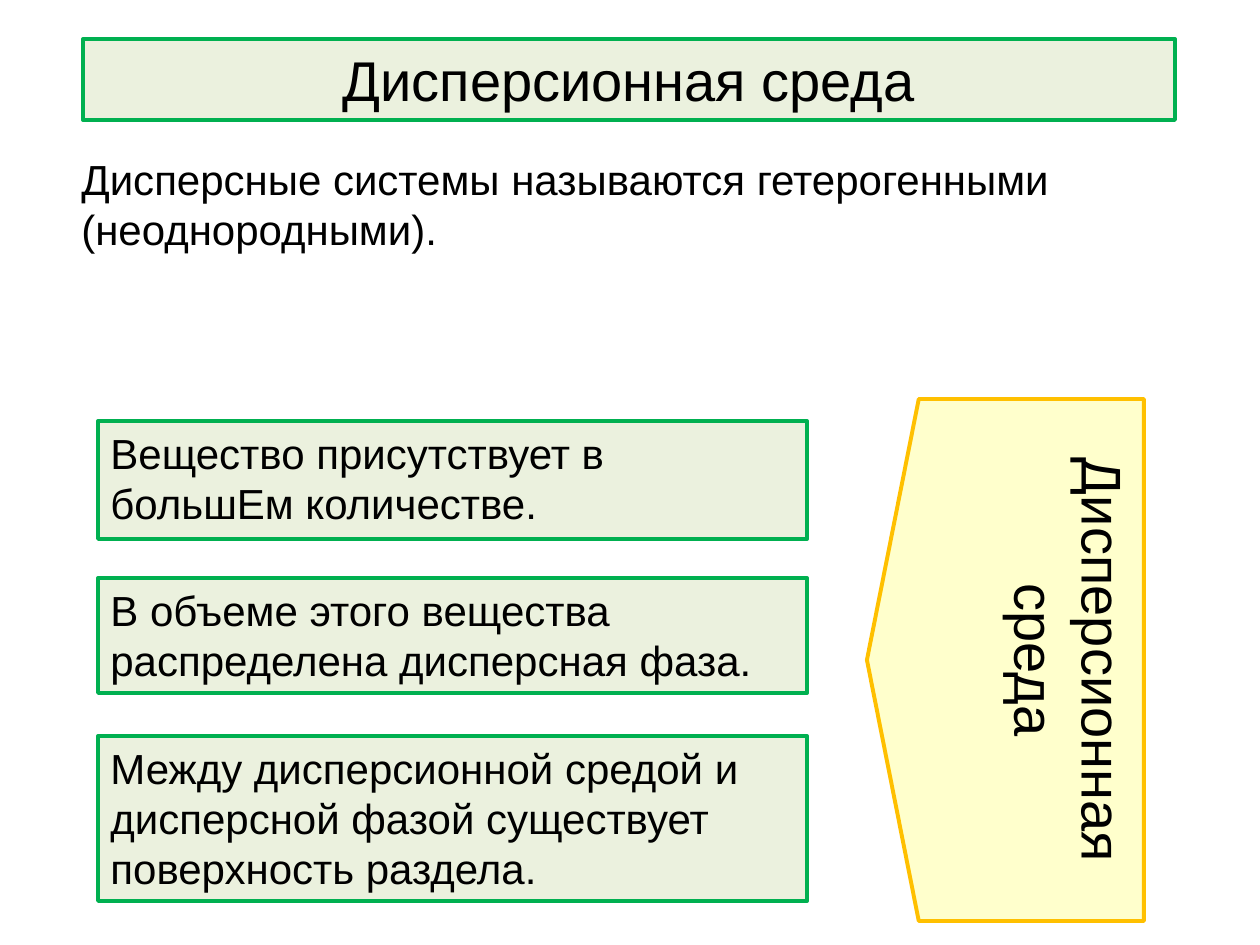
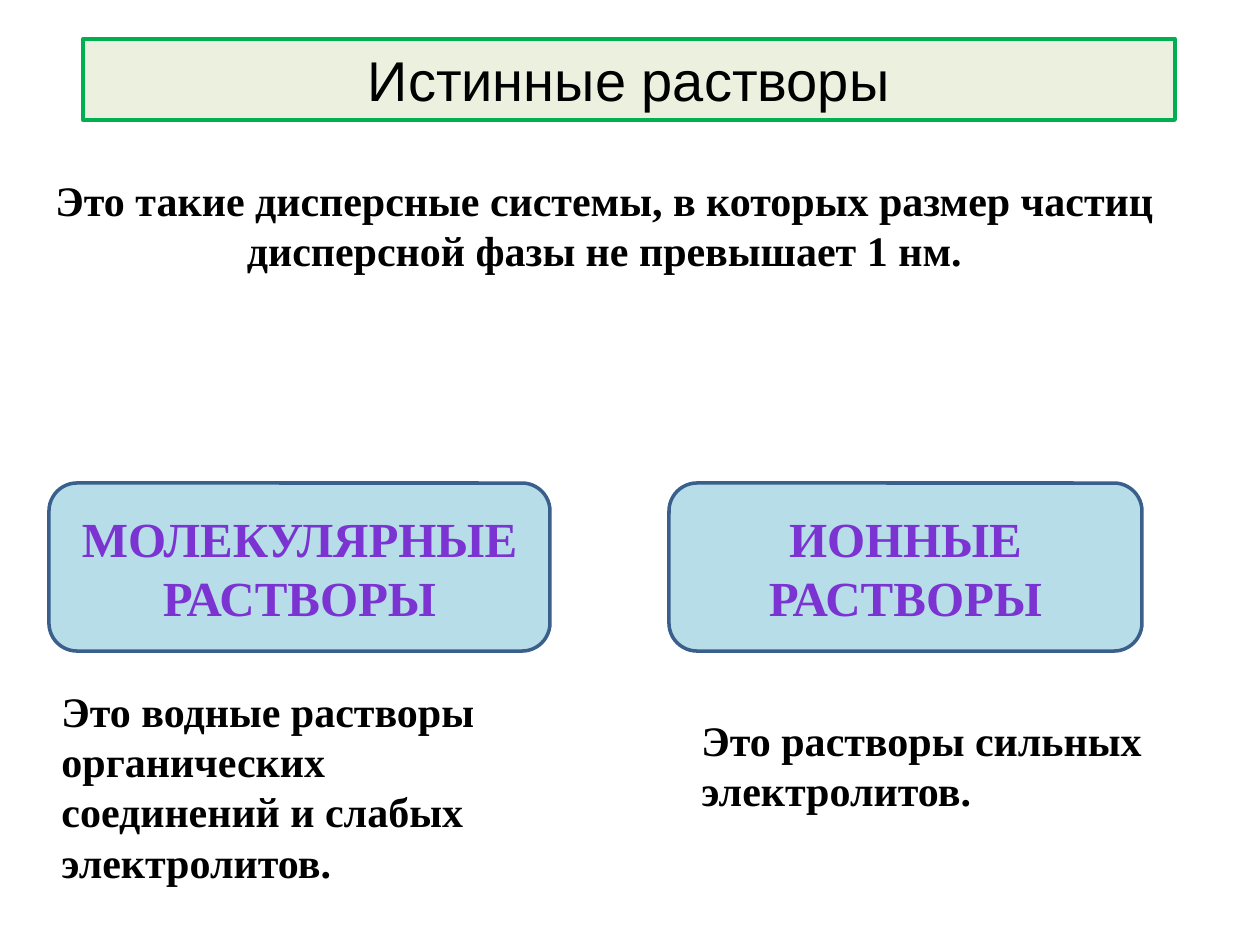
from pptx import Presentation
from pptx.dml.color import RGBColor
from pptx.enum.shapes import MSO_SHAPE as Shape
from pptx.enum.text import MSO_ANCHOR as Anchor, PP_ALIGN as Align
from pptx.util import Emu, Pt

PX_PER_INCH = 126
SANS, SERIF = "Arial", "Times New Roman"
BLACK, VIOLET = "000000", "7B34D2"
PALE_GREEN, GREEN = "EBF1DE", "00B050"
PALE_YELLOW, AMBER = "FFFFCC", "FFC000"
PALE_BLUE, BLUE = "B7DEE8", "3A5F8C"


def px(length):
    return Emu(round(length * 914400 / PX_PER_INCH))


def color(hex_string):
    return RGBColor.from_string(hex_string)


class SlideBuilder:
    """Holds the deck, the current slide and the shared style."""

    def __init__(self):
        self.deck = Presentation()
        self.deck.slide_width, self.deck.slide_height = px(1260), px(945)
        self.page = None

    def new_page(self, title):
        self.page = self.deck.slides.add_slide(self.deck.slide_layouts[6])
        self.panel(title, 83, 39, 1092, 81, size=32, align=Align.CENTER)

    def fill_text(self, box, text, size=24, font=SANS, bold=False, ink=BLACK,
                  align=Align.LEFT, anchor=Anchor.TOP):
        frame = box.text_frame
        frame.word_wrap = True
        frame.vertical_anchor = anchor
        para = frame.paragraphs[0]
        para.text = text
        para.alignment = align
        para.font.size = Pt(size)
        para.font.name = font
        para.font.bold = bold
        para.font.color.rgb = color(ink)

    def text(self, text, left, top, width, height, **style):
        box = self.page.shapes.add_textbox(px(left), px(top), px(width), px(height))
        self.fill_text(box, text, **style)

    def panel(self, text, left, top, width, height, kind=Shape.RECTANGLE,
              fill=PALE_GREEN, line=GREEN, weight=2.25, **style):
        box = self.page.shapes.add_shape(kind, px(left), px(top), px(width), px(height))
        box.shadow.inherit = False
        box.fill.solid()
        box.fill.fore_color.rgb = color(fill)
        box.line.color.rgb = color(line)
        box.line.width = Pt(weight)
        self.fill_text(box, text, **style)
        return box

    def left_pentagon(self, text, left, top, width, height):
        """Pentagon pointing left, with its text turned to run downwards."""
        box = self.panel(text, left, top, width, height, kind=Shape.PENTAGON,
                         fill=PALE_YELLOW, line=AMBER, size=32, align=Align.CENTER)
        box.adjustments[0] = 0.187
        box._element.spPr.xfrm.set("flipH", "1")
        box.text_frame._txBody.bodyPr.set("vert", "vert")

    def rounded(self, text, left, top, width, height):
        self.panel(text, left, top, width, height, kind=Shape.ROUNDED_RECTANGLE,
                   fill=PALE_BLUE, line=BLUE, weight=2, size=28, font=SERIF,
                   bold=True, ink=VIOLET, align=Align.CENTER, anchor=Anchor.MIDDLE)


def dispersion_medium(builder):
    builder.new_page("Дисперсионная среда")
    builder.text("Дисперсные системы называются гетерогенными (неоднородными).",
                 69, 147, 1131, 115)
    features = [
        ("Вещество присутствует в большЕм количестве.", 118),
        ("В объеме этого вещества распределена дисперсная фаза.", 115),
        ("Между дисперсионной средой и дисперсной фазой существует "
         "поверхность раздела.", 165),
    ]
    for row, (feature, height) in enumerate(features):
        builder.panel(feature, 98, 421 + row * 315 // 2, 709, height)
    builder.left_pentagon("Дисперсионная среда", 867, 399, 277, 522)


def true_solutions(builder):
    builder.new_page("Истинные растворы")
    serif = {"font": SERIF, "bold": True}
    builder.text("Это такие дисперсные системы, в которых размер частиц "
                 "дисперсной фазы не превышает 1 нм.",
                 39, 168, 1131, 115, align=Align.CENTER, **serif)
    builder.rounded("МОЛЕКУЛЯРНЫЕ РАСТВОРЫ", 49, 483, 501, 168)
    builder.rounded("ИОННЫЕ РАСТВОРЫ", 669, 483, 473, 168)
    builder.text("Это водные растворы органических соединений и слабых электролитов.",
                 49, 679, 473, 217, **serif)
    builder.text("Это растворы сильных электролитов.", 689, 708, 473, 115, **serif)


def main():
    builder = SlideBuilder()
    dispersion_medium(builder)
    true_solutions(builder)
    builder.deck.save("out.pptx")


if __name__ == "__main__":
    main()
